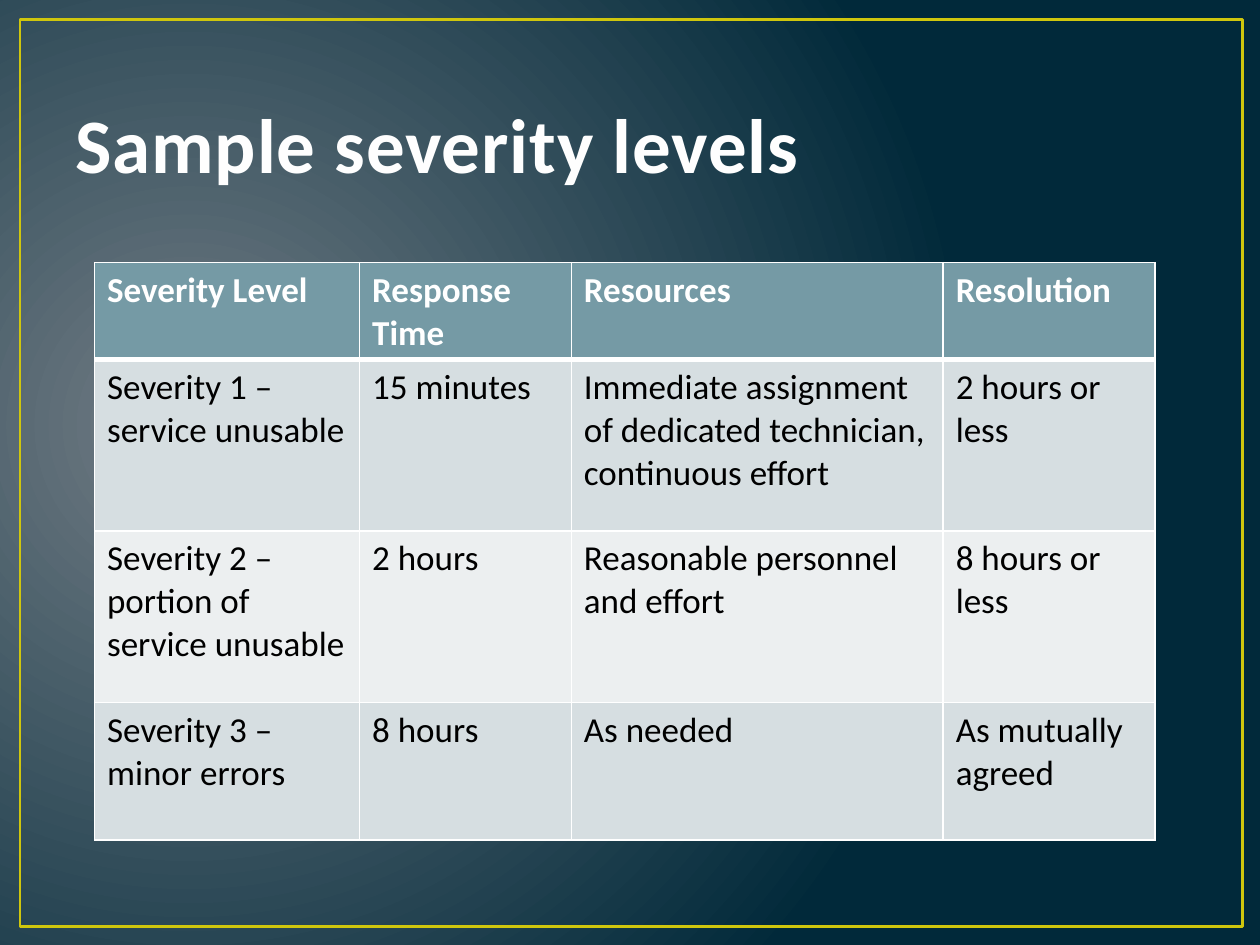
from dataclasses import dataclass

from lxml.etree import SubElement
from pptx import Presentation
from pptx.dml.color import RGBColor as RGB
from pptx.enum.shapes import MSO_SHAPE as SHAPE
from pptx.enum.text import MSO_ANCHOR as ANCHOR
from pptx.oxml.ns import qn
from pptx.util import Pt


@dataclass(frozen=True)
class Theme:
    font: str = "Calibri"
    title_size: int = 44
    table_size: int = 20
    glow: str = "717C84"
    night: str = "01293A"
    frame: str = "CFC60D"
    title: str = "FEFEFE"
    header: str = "759AA5"
    bands: tuple = ("D6DEE1", "ECEFF0")
    header_text: str = "FFFFFF"
    body_text: str = "000000"
    border: str = "FFFFFF"


THEME = Theme()

COLUMN_WIDTHS = (151.5, 121, 212.5, 121)
ROW_HEIGHTS = (55.5, 98, 98, 78.5)
SEVERITY_LEVELS = (
    ("Severity Level", "Response Time", "Resources", "Resolution"),
    ("Severity 1 – service unusable", "15 minutes",
     "Immediate assignment of dedicated technician, continuous effort",
     "2 hours or less"),
    ("Severity 2 – portion of service unusable", "2 hours",
     "Reasonable personnel and effort", "8 hours or less"),
    ("Severity 3 – minor errors", "8 hours", "As needed",
     "As mutually agreed"),
)


def style_font(p, size, color, bold):
    font = p.font
    font.name, font.size, font.bold = THEME.font, Pt(size), bold
    font.color.rgb = RGB.from_string(color)


def set_background(s):
    """Fill the slide with a radial glow centred near the left edge."""
    fill = s.background.fill
    fill.gradient()
    stops = zip(fill.gradient_stops, (0, 1), (THEME.glow, THEME.night))
    for stop, position, color in stops:
        stop.position = position
        stop.color.rgb = RGB.from_string(color)
    grad = s.background._cSld.find(".//" + qn("a:gradFill"))
    grad.remove(grad.find(qn("a:lin")))
    circle = SubElement(grad, qn("a:path"), path="circle")
    SubElement(circle, qn("a:fillToRect"),
               l="15000", t="50000", r="85000", b="60000")


def add_frame(s, left, top, width, height):
    sp = s.shapes.add_shape(SHAPE.RECTANGLE, Pt(left), Pt(top),
                            Pt(width), Pt(height))
    sp.shadow.inherit = False
    sp.fill.background()
    sp.line.color.rgb = RGB.from_string(THEME.frame)
    sp.line.width = Pt(1.5)


def add_title(s, text, left, top, width, height):
    tf = s.shapes.add_textbox(Pt(left), Pt(top), Pt(width),
                              Pt(height)).text_frame
    tf.word_wrap = True
    tf.vertical_anchor = ANCHOR.BOTTOM
    p = tf.paragraphs[0]
    r = p.add_run()
    r.text = text
    style_font(p, THEME.title_size, THEME.title, True)
    r._r.get_or_add_rPr().set("spc", "50")


def set_borders(cell, **widths):
    """Draw cell borders; widths in points, keyed by side L, R, T, B."""
    tc_pr = cell._tc.get_or_add_tcPr()
    for side, width in widths.items():
        ln = SubElement(tc_pr, qn(f"a:ln{side}"), w=str(Pt(width)))
        SubElement(SubElement(ln, qn("a:solidFill")), qn("a:srgbClr"),
                   val=THEME.border)


def add_table(s, rows, left, top):
    table = s.shapes.add_table(
        len(rows), len(COLUMN_WIDTHS), Pt(left), Pt(top),
        Pt(sum(COLUMN_WIDTHS)), Pt(sum(ROW_HEIGHTS))).table
    for column, width in zip(table.columns, COLUMN_WIDTHS):
        column.width = Pt(width)
    for i, (row, height, texts) in enumerate(
            zip(table.rows, ROW_HEIGHTS, rows)):
        row.height = Pt(height)
        header = i == 0
        fill = THEME.header if header else THEME.bands[(i - 1) % 2]
        color = THEME.header_text if header else THEME.body_text
        for cell, text in zip(row.cells, texts):
            cell.text = text
            style_font(cell.text_frame.paragraphs[0], THEME.table_size,
                       color, header)
            set_borders(cell, L=1, R=1, T=3 if i == 1 else 1,
                        B=3 if header else 1)
            cell.fill.solid()
            cell.fill.fore_color.rgb = RGB.from_string(fill)


def main():
    prs = Presentation()
    prs.slide_width, prs.slide_height = Pt(720), Pt(540)
    s = prs.slides.add_slide(prs.slide_layouts[6])
    set_background(s)
    add_frame(s, 11.5, 11, 698.5, 518.5)
    add_title(s, "Sample severity levels", 36, 21.6, 648, 90)
    add_table(s, SEVERITY_LEVELS, 54, 150)
    prs.save("out.pptx")


if __name__ == "__main__":
    main()
